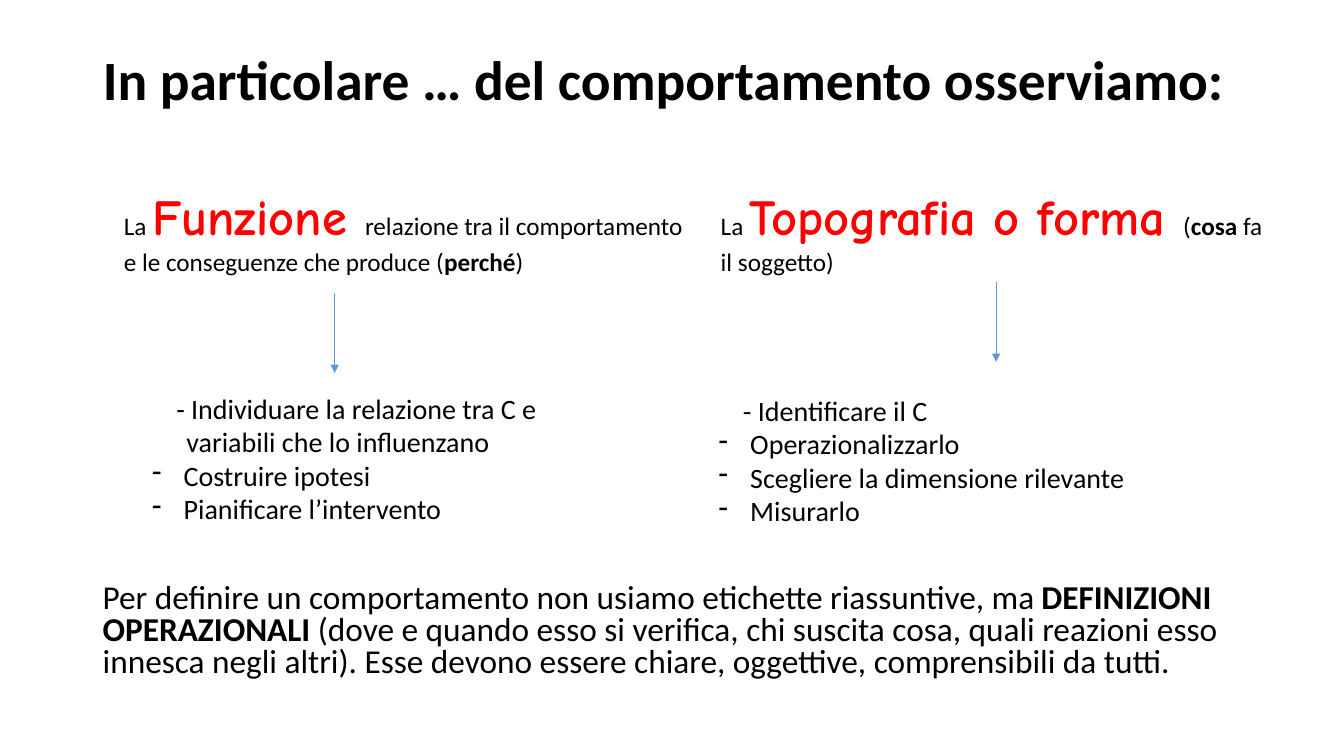
from dataclasses import dataclass

from lxml import etree
from pptx import Presentation
from pptx import util as u
from pptx.dml.color import RGBColor
from pptx.enum import shapes, text
from pptx.oxml import ns

BLACK, RED, BLUE = "000000", "FF0000", "5B9BD5"


@dataclass
class Run:
    words: str
    size: float = 18
    bold: bool = False
    font: str = "Calibri"
    hue: str = BLACK


@dataclass
class Column:
    head: list[Run]
    head_box: tuple[float, float, float, float]
    arrow: tuple[float, float]
    items: list[str]
    list_box: tuple[float, float, float, float]


def color(code: str) -> RGBColor:
    return RGBColor.from_string(code)


def key(word: str) -> Run:
    return Run(word, 36, True, "Comic Neue", RED)


def add_runs(para, runs: list[Run]) -> None:
    for run in runs:
        part = para.add_run()
        part.text = run.words
        part.font.size = u.Pt(run.size)
        part.font.bold = run.bold
        part.font.name = run.font
        part.font.color.rgb = color(run.hue)


def place(shape, box: tuple[float, float, float, float]) -> None:
    shape.left, shape.top, shape.width, shape.height = map(u.Inches, box)


def add_box(slide, box: tuple[float, float, float, float]):
    frame = slide.shapes.add_textbox(*map(u.Inches, box)).text_frame
    frame.word_wrap = True
    return frame


def indent(para, left: float, first: float, mark: str = "") -> None:
    props = para._p.get_or_add_pPr()
    props.set("marL", str(u.Inches(left)))
    props.set("indent", str(u.Inches(first)))
    if mark:
        etree.SubElement(props, ns.qn("a:buFontTx"))
        etree.SubElement(props, ns.qn("a:buChar")).set("char", mark)


def add_list(slide, column: Column) -> None:
    frame = add_box(slide, column.list_box)
    for i, item in enumerate(column.items):
        para = frame.add_paragraph() if i else frame.paragraphs[0]
        if i:
            indent(para, 0.3, -0.25, "-")
        else:
            indent(para, 0.39, -0.1)
        add_runs(para, [Run(item if i == 0 else " " + item, 20)])


def add_arrow(slide, x: float, y: float) -> None:
    ends = map(u.Inches, (x, y, x, y + 0.79))
    line = slide.shapes.add_connector(shapes.MSO_CONNECTOR.STRAIGHT, *ends)
    line.line.color.rgb = color(BLUE)
    line.line.width = u.Pt(0.5)
    tip = etree.SubElement(line.line._get_or_add_ln(), ns.qn("a:tailEnd"))
    tip.set("type", "triangle")
    etree.SubElement(line._element.spPr, ns.qn("a:effectLst"))


COLUMNS = [
    Column(
        [Run("La "), key("Funzione "),
         Run("relazione tra il comportamento e le conseguenze che produce ("),
         Run("perché", bold=True), Run(")")],
        (1.13, 1.79, 5.78, 1.62),
        (3.32, 2.91),
        ["- Individuare la relazione tra C e variabili che lo influenzano",
         "Costruire ipotesi", "Pianificare l’intervento"],
        (1.36, 3.83, 4.45, 1.45),
    ),
    Column(
        [Run("La "), key("Topografia o forma "), Run("("),
         Run("cosa", bold=True), Run(" fa il soggetto)")],
        (7.05, 1.79, 5.58, 1.31),
        (9.88, 2.8),
        ["- Identificare il C", "Operazionalizzarlo",
         "Scegliere la dimensione rilevante", "Misurarlo"],
        (6.98, 3.85, 4.45, 1.45),
    ),
]

CLOSING = [
    Run("Per definire un comportamento non usiamo etichette riassuntive, ma ", 23.8),
    Run("DEFINIZIONI OPERAZIONALI", 23.8, True),
    Run(" (dove e quando esso si verifica, chi suscita cosa, quali reazioni esso "
        "innesca negli altri). Esse devono essere chiare, oggettive, "
        "comprensibili da tutti.", 23.8),
]


def main() -> None:
    deck = Presentation()
    deck.slide_width, deck.slide_height = u.Inches(13.33), u.Inches(7.5)
    slide = deck.slides.add_slide(deck.slide_layouts[5])

    # Title
    title = slide.shapes.title
    place(title, (0.92, 0.4, 11.5, 1.45))
    frame = title.text_frame
    frame.word_wrap = True
    frame.auto_size = text.MSO_AUTO_SIZE.NONE
    frame.vertical_anchor = text.MSO_ANCHOR.TOP
    frame.margin_top = u.Inches(0.12)
    para = frame.paragraphs[0]
    para.alignment = text.PP_ALIGN.LEFT
    para.line_spacing = 0.9
    add_runs(para, [Run("In particolare … del comportamento osserviamo:", 39.6, True)])

    # Closing statement
    para = add_box(slide, (0.92, 5.74, 11.5, 1.02)).paragraphs[0]
    para.line_spacing = 0.8
    add_runs(para, CLOSING)

    # Two columns: heading, arrow, list
    for column in COLUMNS:
        add_runs(add_box(slide, column.head_box).paragraphs[0], column.head)
        add_arrow(slide, *column.arrow)
        add_list(slide, column)

    deck.save("out.pptx")


if __name__ == "__main__":
    main()
